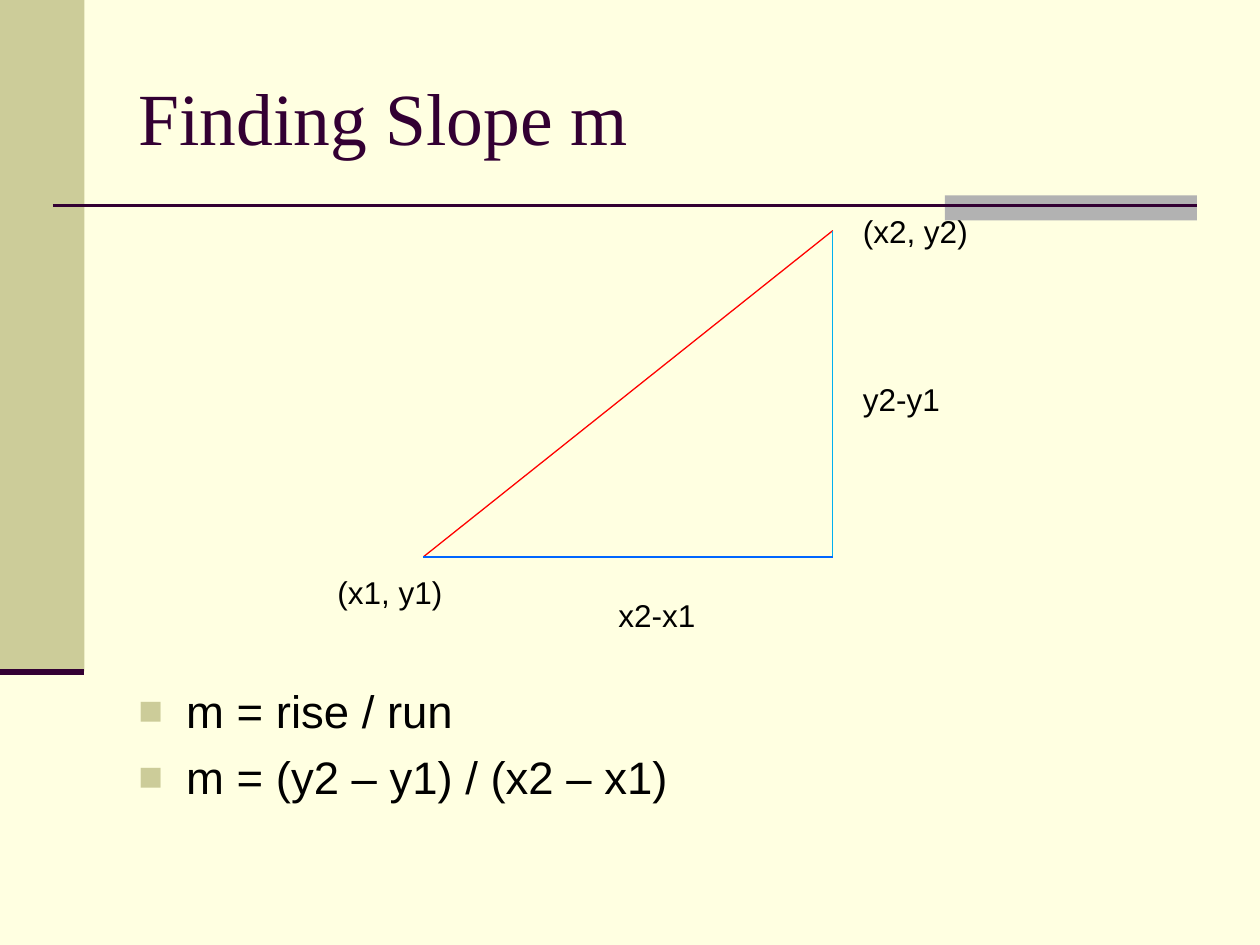
from lxml.etree import SubElement
from pptx import Presentation
from pptx.dml.color import RGBColor
from pptx.enum.shapes import MSO_CONNECTOR, MSO_SHAPE
from pptx.enum.text import MSO_ANCHOR, MSO_AUTO_SIZE
from pptx.oxml.ns import qn
from pptx.util import Inches, Pt

CREAM = RGBColor(0xFF, 0xFF, 0xE1)
KHAKI = RGBColor(0xCC, 0xCC, 0x99)
GREY = RGBColor(0xB2, 0xB2, 0xB2)
PLUM = RGBColor(0x33, 0x00, 0x33)
RED = RGBColor(0xFF, 0x00, 0x00)
SKY = RGBColor(0x00, 0xB0, 0xF0)
BLUE = RGBColor(0x00, 0x66, 0xFF)
BLACK = RGBColor(0x00, 0x00, 0x00)

# Content
TITLE = "Finding Slope m"
FORMULAS = ["m = rise / run", "m = (y2 – y1) / (x2 – x1)"]
LABELS = [  # text, left, top, width
    ("(x2, y2)", 6.75, 1.63, 1.04),
    ("(x1, y1)", 2.58, 4.5, 1.04),
    ("y2-y1", 6.75, 2.97, 0.82),
    ("x2-x1", 4.81, 4.68, 0.82),
]
BANDS = [((0, 0, 0.67, 5.33), KHAKI), ((7.5, 1.55, 2, 0.2), GREY)]
RULES = [((0.42, 1.63), (9.5, 1.63), PLUM, 1.5),
         ((0, 5.33), (0.67, 5.33), PLUM, 3.5)]
POINT_1, POINT_2, CORNER = (3.36, 4.42), (6.61, 1.83), (6.61, 4.42)
TRIANGLE = [(POINT_2, POINT_1, RED, 0.75),
            (POINT_2, CORNER, SKY, 0.75),
            (POINT_1, CORNER, BLUE, 0.75)]

prs = Presentation()
prs.slide_width, prs.slide_height = Inches(10), Inches(7.5)
slide = prs.slides.add_slide(prs.slide_layouts[6])
slide.background.fill.solid()
slide.background.fill.fore_color.rgb = CREAM


def add_line(start, end, color, width):
    line = slide.shapes.add_connector(
        MSO_CONNECTOR.STRAIGHT, *map(Inches, start + end))
    line.line.color.rgb = color
    line.line.width = Pt(width)
    SubElement(line._element.spPr, qn("a:effectLst"))


def add_frame(box, wrap=True):
    frame = slide.shapes.add_textbox(*map(Inches, box)).text_frame
    frame.word_wrap = wrap
    return frame


def add_run(paragraph, text, size, font="Arial", color=BLACK):
    run = paragraph.add_run()
    run.text = text
    run.font.size = Pt(size)
    run.font.name = font
    run.font.color.rgb = color


def add_bullet(paragraph):
    props = paragraph._p.get_or_add_pPr()
    props.set("marL", str(Inches(0.38)))
    props.set("indent", str(-Inches(0.38)))
    bullet_color = SubElement(props, qn("a:buClr"))
    SubElement(bullet_color, qn("a:srgbClr"), val=str(KHAKI))
    SubElement(props, qn("a:buSzPct"), val="90000")
    SubElement(props, qn("a:buFont"), typeface="Arial")
    SubElement(props, qn("a:buChar"), char="■")


# Side band, grey tab and rules
for box, color in BANDS:
    band = slide.shapes.add_shape(MSO_SHAPE.RECTANGLE, *map(Inches, box))
    band.shadow.inherit = False
    band.fill.solid()
    band.fill.fore_color.rgb = color
    band.line.fill.background()
for rule in RULES:
    add_line(*rule)

# Title
title = add_frame((1, 0.3, 8.5, 1.25))
title.vertical_anchor = MSO_ANCHOR.MIDDLE
add_run(title.paragraphs[0], TITLE, 42, "Times New Roman", PLUM)

# Slope formulas
formulas = add_frame((1, 5.37, 8.5, 1.33))
for i, formula in enumerate(FORMULAS):
    paragraph = formulas.add_paragraph() if i else formulas.paragraphs[0]
    paragraph.space_after = Pt(6.5)
    add_bullet(paragraph)
    add_run(paragraph, formula, 26)

# Triangle and its labels
for side in TRIANGLE:
    add_line(*side)
for text, left, top, width in LABELS:
    label = add_frame((left, top, width, 0.4), wrap=False)
    label.auto_size = MSO_AUTO_SIZE.SHAPE_TO_FIT_TEXT
    add_run(label.paragraphs[0], text, 18)

prs.save("out.pptx")
